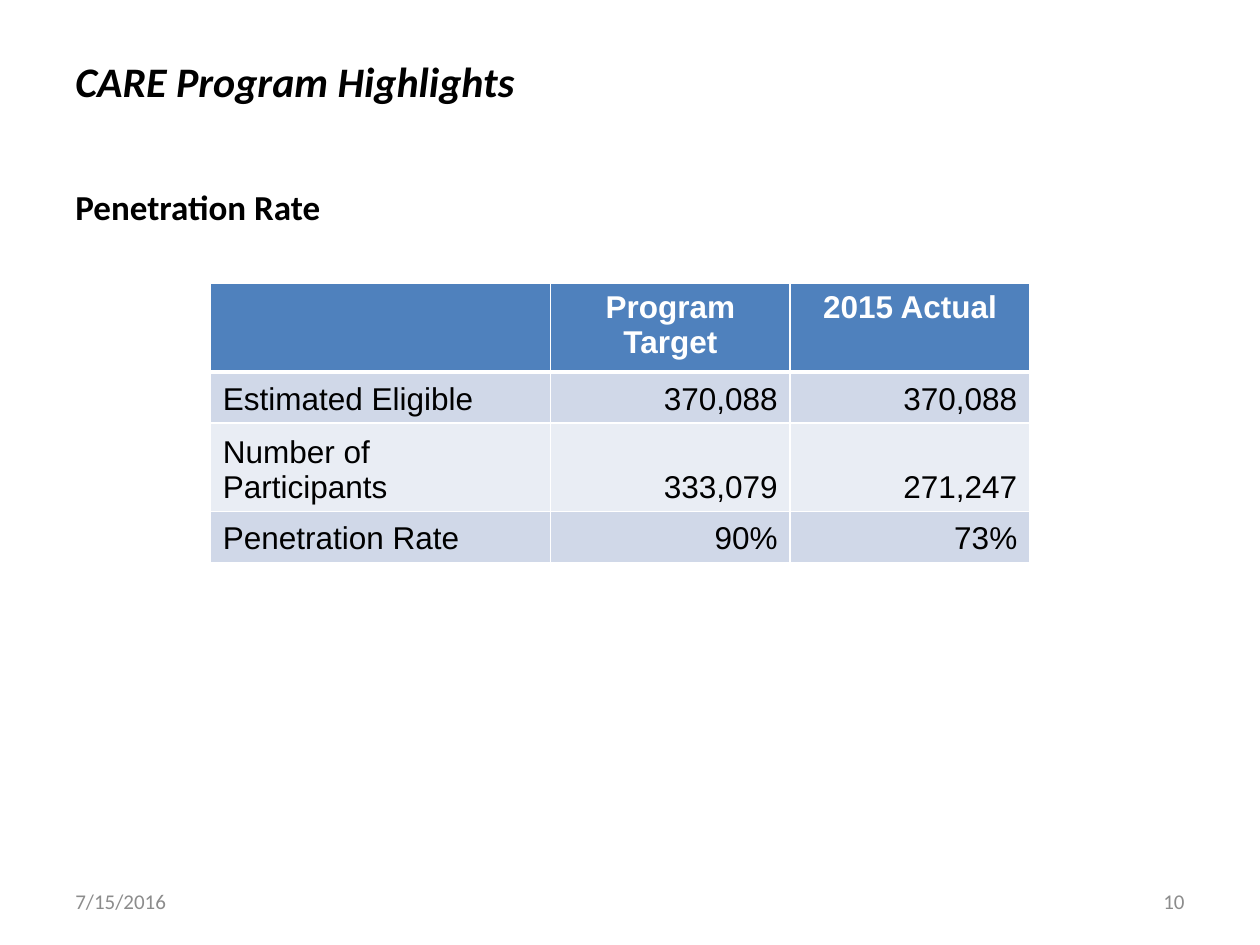
from lxml.etree import SubElement as Sub
from pptx import Presentation
from pptx.dml.color import RGBColor as Rgb
from pptx.enum.text import MSO_ANCHOR as Anchor, PP_ALIGN as Align
from pptx.oxml.ns import qn
from pptx.util import Cm, Pt

TEXTS = [
    ("CARE Program Highlights", (1.27, 0.84, 16.51, 1.57),
     dict(size="title", bold=True, italic=True)),
    ("Penetration Rate", (1.27, 3.61, 22.86, 13.41),
     dict(size="body", bold=True, anchor=Anchor.TOP, after=12)),
    ("7/15/2016", (1.27, 17.65, 5.92, 1.02), dict(size="foot", color="gray")),
    ("10", (18.21, 17.65, 5.92, 1.02),
     dict(size="foot", color="gray", align=Align.RIGHT)),
]
ROWS = [
    ("", "Program Target", "2015 Actual"),
    ("Estimated Eligible", "370,088", "370,088"),
    ("Number of Participants", "333,079", "271,247"),
    ("Penetration Rate", "90%", "73%"),
]
WIDTHS = (6.86, 4.83, 4.83)
LEFT, TOP, HIGH = 4.24, 5.72, 1.03

THEME = {
    "font": "Calibri", "grid_font": "Arial",
    "title": 24, "body": 20, "cell": 18, "foot": 12,
    "black": "000000", "white": "FFFFFF", "gray": "8C8C8C",
    "head": "4F81BD", "bands": ("D0D8E8", "E9EDF4"),
    "thin": 1, "thick": 3,
}


def write(frame, text, size="body", font="font", color="black", bold=False,
          italic=False, align=Align.LEFT, anchor=Anchor.MIDDLE, after=0):
    frame.word_wrap = True
    frame.vertical_anchor = anchor
    para = frame.paragraphs[0]
    para.text = text
    para.alignment = align
    para.space_after = Pt(after)
    face = para.font
    face.name, face.size = THEME[font], Pt(THEME[size])
    face.bold, face.italic = bold, italic
    face.color.rgb = Rgb.from_string(THEME[color])


def edge(cell, side, width):
    line = Sub(cell._tc.get_or_add_tcPr(), qn(f"a:ln{side}"), w=str(Pt(width)))
    fill = Sub(line, qn("a:solidFill"))
    Sub(fill, qn("a:srgbClr"), val=THEME["white"])


def style(cell, text, row, col):
    head = row == 0
    thick = {"B": 0, "T": 1}
    for side in "LRTB":
        edge(cell, side, THEME["thick" if thick.get(side) == row else "thin"])
    cell.fill.solid()
    tint = THEME["head"] if head else THEME["bands"][(row - 1) % 2]
    cell.fill.fore_color.rgb = Rgb.from_string(tint)
    side = Align.CENTER if head else Align.RIGHT if col else Align.LEFT
    write(cell.text_frame, text, size="cell", font="grid_font", bold=head,
          color="white" if head else "black", align=side)
    cell.vertical_anchor = Anchor.TOP if head else Anchor.BOTTOM


def main():
    """Build the CARE penetration rate slide."""
    deck = Presentation()
    deck.slide_width, deck.slide_height = Cm(25.4), Cm(19.05)
    slide = deck.slides.add_slide(deck.slide_layouts[6])
    for text, place, form in TEXTS:
        box = slide.shapes.add_textbox(*map(Cm, place))
        write(box.text_frame, text, **form)
    grid = slide.shapes.add_table(
        len(ROWS), len(WIDTHS), Cm(LEFT), Cm(TOP),
        Cm(sum(WIDTHS)), Cm(HIGH * len(ROWS))).table
    for col, width in enumerate(WIDTHS):
        grid.columns[col].width = Cm(width)
    for row, texts in enumerate(ROWS):
        grid.rows[row].height = Cm(HIGH)
        for col, text in enumerate(texts):
            style(grid.cell(row, col), text, row, col)
    deck.save("out.pptx")


if __name__ == "__main__":
    main()
